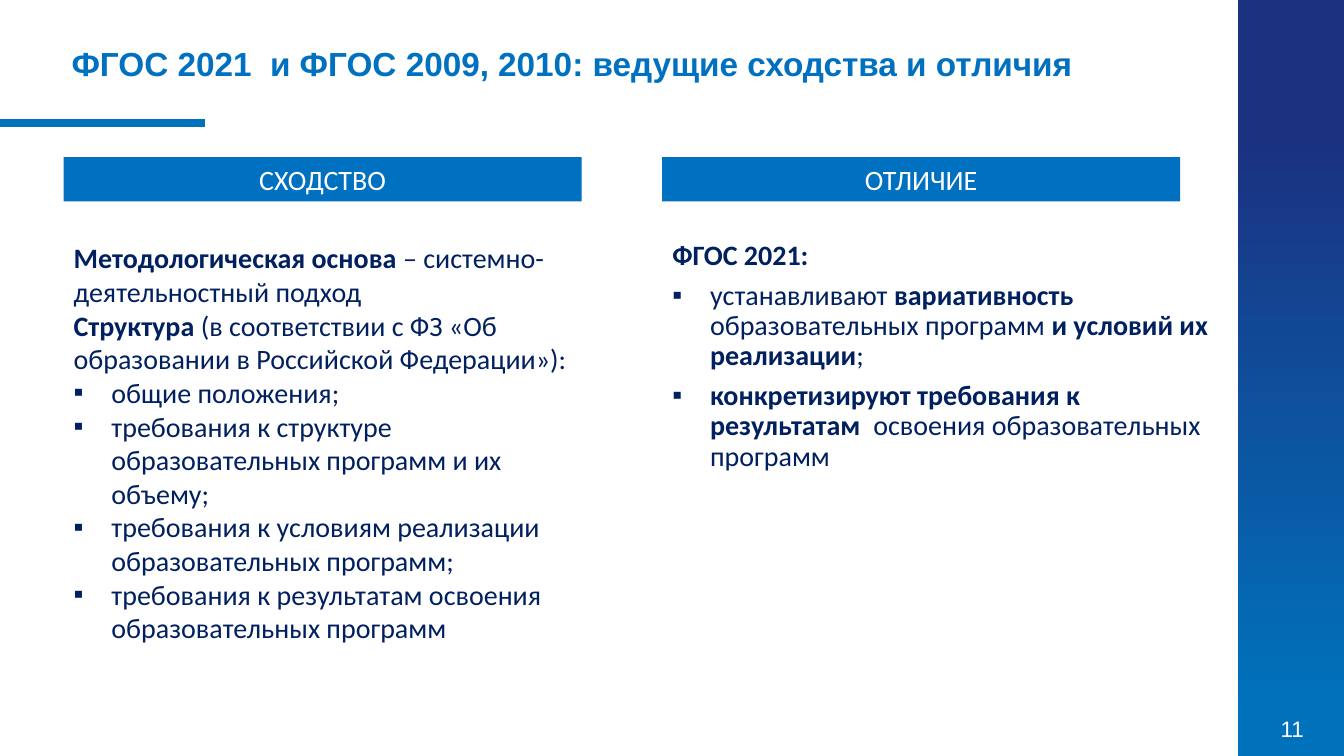
"""Build a slide comparing similarities and differences of the education standards."""
from lxml.etree import SubElement
from pptx import Presentation
from pptx.dml.color import RGBColor
from pptx.enum.shapes import MSO_CONNECTOR, MSO_SHAPE
from pptx.enum.text import MSO_ANCHOR, MSO_AUTO_SIZE, PP_ALIGN
from pptx.oxml.ns import qn
from pptx.util import Pt

BLUE, NAVY, WHITE = "0070C0", "002060", "FFFFFF"
STRIP_TOP, STRIP_BOTTOM = "1B3281", "0072BC"
BULLET_INDENT = 27

TITLE = "ФГОС 2021  и ФГОС 2009, 2010: ведущие сходства и отличия"
PAGE_NUMBER = "11"
COLUMNS = [
    {
        "heading": "СХОДСТВО",
        "heading_left": 45.4,
        "body": (45.4, 168.5, 375.8, 298),
        "line_spacing": 1.0,
        "space_after": 0,
        "paragraphs": [
            (False, [("Методологическая основа ", True),
                     ("– системно-деятельностный подход", False)]),
            (False, [("Структура ", True),
                     ("(в соответствии с ФЗ «Об образовании в Российской Федерации»):", False)]),
            (True, [("общие положения;", False)]),
            (True, [("требования к структуре образовательных программ и их объему;", False)]),
            (True, [("требования к условиям реализации образовательных программ;", False)]),
            (True, [("требования к результатам освоения образовательных программ", False)]),
        ],
    },
    {
        "heading": "ОТЛИЧИЕ",
        "heading_left": 473,
        "body": (473, 168.5, 397.4, 177),
        "line_spacing": 0.9,
        "space_after": 7,
        "paragraphs": [
            (False, [("ФГОС 2021:", True)]),
            (True, [("устанавливают ", False), ("вариативность ", True),
                    ("образовательных программ ", False),
                    ("и условий их реализации", True), (";", False)]),
            (True, [("конкретизируют требования к результатам  ", True),
                    ("освоения образовательных программ", False)]),
        ],
    },
]


def color(hex_value):
    return RGBColor.from_string(hex_value)


def place(shape, left, top, width, height):
    shape.left, shape.top = Pt(left), Pt(top)
    shape.width, shape.height = Pt(width), Pt(height)


def format_run(run, name, size, hex_value, bold=False):
    run.font.name, run.font.size, run.font.bold = name, Pt(size), bold
    run.font.color.rgb = color(hex_value)


def write_line(shape, text, name, size, hex_value, alignment, bold=False):
    frame = shape.text_frame
    frame.text = text
    frame.word_wrap = True
    frame.auto_size = MSO_AUTO_SIZE.NONE
    frame.vertical_anchor = MSO_ANCHOR.MIDDLE
    paragraph = frame.paragraphs[0]
    paragraph.alignment = alignment
    format_run(paragraph.runs[0], name, size, hex_value, bold)
    return paragraph


def set_bullet(paragraph, bulleted):
    properties = paragraph._p.get_or_add_pPr()
    indent = Pt(BULLET_INDENT) if bulleted else 0
    properties.set("marL", str(indent))
    properties.set("indent", str(-indent))
    if bulleted:
        SubElement(properties, qn("a:buFont"), typeface="Arial")
        SubElement(properties, qn("a:buChar"), char="▪")
    else:
        SubElement(properties, qn("a:buNone"))


def add_rectangle(slide, left, top, width, height):
    shape = slide.shapes.add_shape(
        MSO_SHAPE.RECTANGLE, Pt(left), Pt(top), Pt(width), Pt(height))
    shape.shadow.inherit = False
    shape.line.fill.background()
    return shape


def add_decoration(slide):
    strip = add_rectangle(slide, 884.2, 0, 75.8, 540)
    strip.fill.gradient()
    strip.fill.gradient_angle = 270
    stops = [(0.18, STRIP_TOP), (0.94, STRIP_BOTTOM)]
    for stop, (position, hex_value) in zip(strip.fill.gradient_stops, stops):
        stop.position = position
        stop.color.rgb = color(hex_value)

    number = slide.shapes.add_textbox(Pt(894.2), Pt(505.4), Pt(57.6), Pt(29.5))
    write_line(number, PAGE_NUMBER, "Arial", 16, WHITE, PP_ALIGN.CENTER)

    accent = slide.shapes.add_connector(
        MSO_CONNECTOR.STRAIGHT, Pt(0), Pt(87.8), Pt(146.2), Pt(87.8))
    accent.line.width = Pt(6)
    accent.line.color.rgb = color(STRIP_BOTTOM)
    SubElement(accent._element.spPr, qn("a:effectLst"))


def fill_column(slide, placeholder, column):
    heading = add_rectangle(slide, column["heading_left"], 112.3, 370, 31.5)
    heading.fill.solid()
    heading.fill.fore_color.rgb = color(BLUE)
    write_line(heading, column["heading"], "Calibri", 20, WHITE, PP_ALIGN.CENTER)

    place(placeholder, *column["body"])
    frame = placeholder.text_frame
    frame.word_wrap = True
    frame.auto_size = MSO_AUTO_SIZE.NONE
    frame.vertical_anchor = MSO_ANCHOR.TOP
    for index, (bulleted, runs) in enumerate(column["paragraphs"]):
        paragraph = frame.add_paragraph() if index else frame.paragraphs[0]
        set_bullet(paragraph, bulleted)
        paragraph.line_spacing = column["line_spacing"]
        paragraph.space_before = Pt(0)
        paragraph.space_after = Pt(column["space_after"])
        for text, bold in runs:
            run = paragraph.add_run()
            run.text = text
            format_run(run, "Calibri", 20, NAVY, bold)


def main():
    presentation = Presentation()
    presentation.slide_width, presentation.slide_height = Pt(960), Pt(540)
    slide = presentation.slides.add_slide(presentation.slide_layouts[3])
    add_decoration(slide)

    title = slide.shapes.title
    place(title, 43.9, 28.8, 745.2, 38.2)
    paragraph = write_line(title, TITLE, "Arial", 23.8, BLUE, PP_ALIGN.LEFT, True)
    paragraph.line_spacing = 0.8

    for index, column in enumerate(COLUMNS, start=1):
        fill_column(slide, slide.placeholders[index], column)
    presentation.save("out.pptx")


if __name__ == "__main__":
    main()
